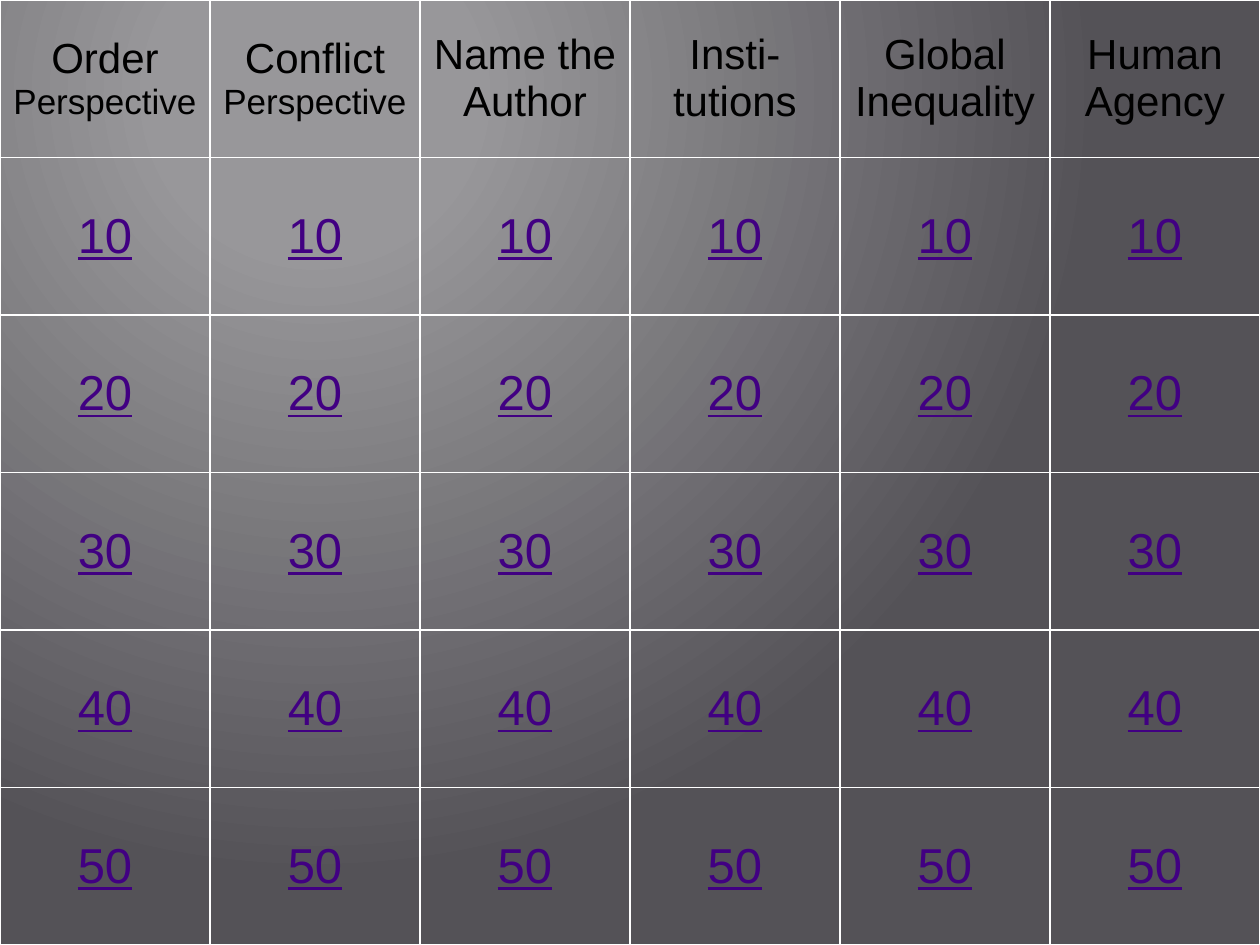
from dataclasses import dataclass

from lxml.etree import SubElement
from pptx import Presentation
from pptx.dml.color import RGBColor as Rgb
from pptx.enum.text import MSO_ANCHOR as Anchor, PP_ALIGN as Align
from pptx.oxml.ns import qn
from pptx.util import Cm, Pt


@dataclass(frozen=True)
class Theme:
    """Colours, font and type sizes of the game board."""
    font: str = "Arial"
    heading: str = "000000"
    points: str = "410082"
    grid: str = "FFFFFF"
    glow: str = "98979A"
    edge: str = "545257"
    heading_size: int = 24
    small_size: int = 20
    points_size: int = 28
    grid_width: int = 1


class Board:
    """Holds the theme and the current slide and draws its parts."""

    def __init__(self, theme, slide, width, height):
        self.theme, self.slide = theme, slide
        self.width, self.height = width, height

    def background(self):
        """Fill the slide with a glow spreading from the upper left."""
        fill = self.slide.background.fill
        fill.gradient()
        stops = ((0.2, self.theme.glow), (1, self.theme.edge))
        for stop, (position, colour) in zip(fill.gradient_stops, stops):
            stop.position = position
            stop.color.rgb = Rgb.from_string(colour)
        gradient = self.slide.element.find(".//" + qn("a:gradFill"))
        gradient.remove(gradient.find(qn("a:lin")))
        circle = SubElement(gradient, qn("a:path"), path="circle")
        SubElement(circle, qn("a:fillToRect"),
                   l="50000", t="20000", r="100000", b="100000")

    def grid(self, categories, values):
        """Add the table with a category row above the point rows."""
        rows, columns = len(values) + 1, len(categories)
        table = self.slide.shapes.add_table(
            rows, columns, 0, 0, self.width, self.height).table
        table.first_row = table.horz_banding = False
        for column in table.columns:
            column.width = round(self.width / columns)
        for row in table.rows:
            row.height = round(self.height / rows)
        for index, category in enumerate(categories):
            self.heading(table.cell(0, index), category)
            for row, value in enumerate(values, 1):
                self.points(table.cell(row, index), value)

    def heading(self, cell, category):
        """Write a category, one list of sized runs per paragraph."""
        self.frame(cell)
        text = cell.text_frame
        for number, parts in enumerate(category):
            line = text.add_paragraph() if number else text.paragraphs[0]
            for wording, size in parts:
                run = line.add_run()
                run.text = wording
                run.font.size = Pt(size)
            self.style(line, self.theme.heading, self.theme.heading_size)

    def points(self, cell, value):
        """Write an underlined point value."""
        self.frame(cell)
        cell.text = str(value)
        line = cell.text_frame.paragraphs[0]
        self.style(line, self.theme.points, self.theme.points_size)
        line.font.underline = True

    def style(self, line, colour, size):
        """Centre a paragraph and set its font."""
        line.alignment = Align.CENTER
        line.font.name = self.theme.font
        line.font.size = Pt(size)
        line.font.color.rgb = Rgb.from_string(colour)

    def frame(self, cell):
        """Give a cell grid lines, no fill and middle anchoring."""
        cell.vertical_anchor = Anchor.MIDDLE
        properties = cell._tc.get_or_add_tcPr()
        for side in ("lnL", "lnR", "lnT", "lnB"):
            border = SubElement(properties, qn(f"a:{side}"),
                                w=str(Pt(self.theme.grid_width)))
            solid = SubElement(border, qn("a:solidFill"))
            SubElement(solid, qn("a:srgbClr"), val=self.theme.grid)
        cell.fill.background()


def main():
    """Build the game board slide."""
    theme = Theme()
    large, small = theme.heading_size, theme.small_size
    categories = [
        [[("Order ", large), ("Perspective", small)]],
        [[("Conflict ", large), ("Perspective", small)]],
        [[("Name the Author", large)]],
        [[("Insti-tutions", large)]],
        [[("Global", large)], [("Inequality", large)]],
        [[("Human Agency", large)]],
    ]
    deck = Presentation()
    deck.slide_width, deck.slide_height = Cm(25.4), Cm(19.05)
    slide = deck.slides.add_slide(deck.slide_layouts[6])
    board = Board(theme, slide, deck.slide_width, deck.slide_height)
    board.background()
    board.grid(categories, range(10, 60, 10))
    deck.save("out.pptx")


if __name__ == "__main__":
    main()
